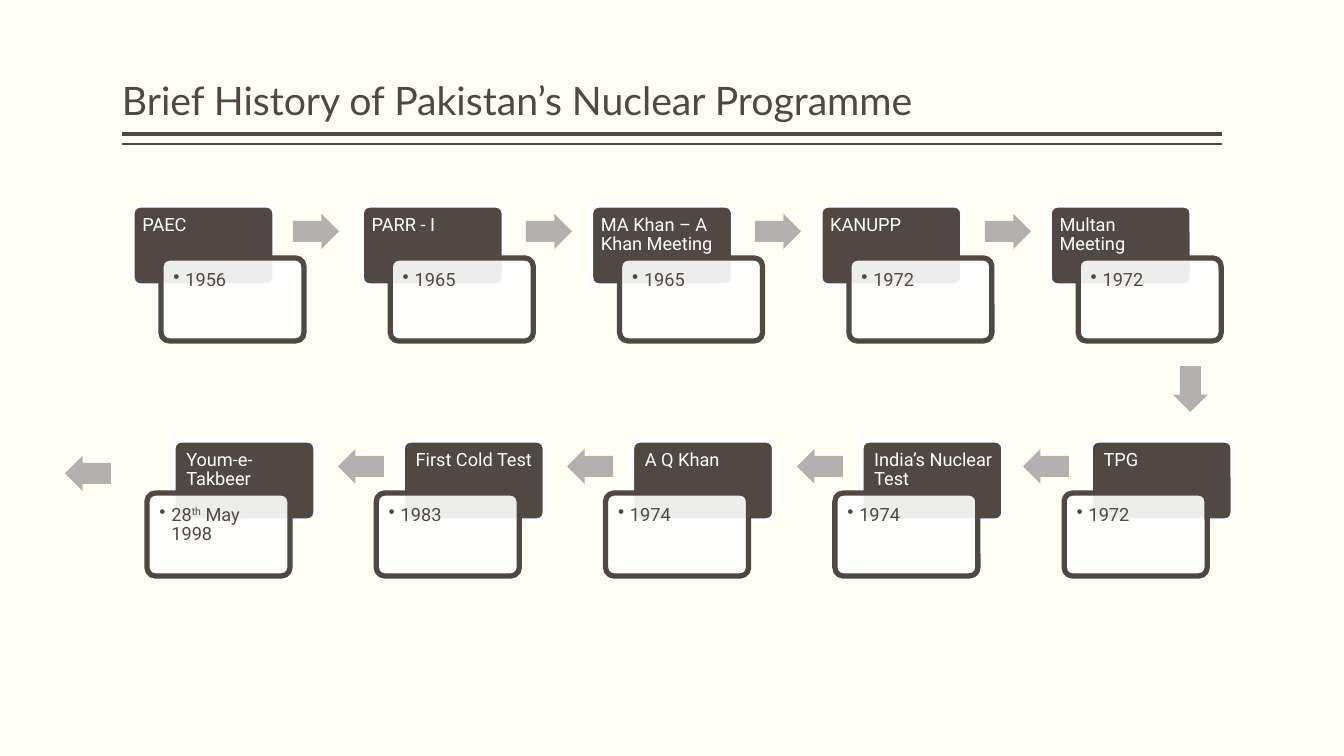
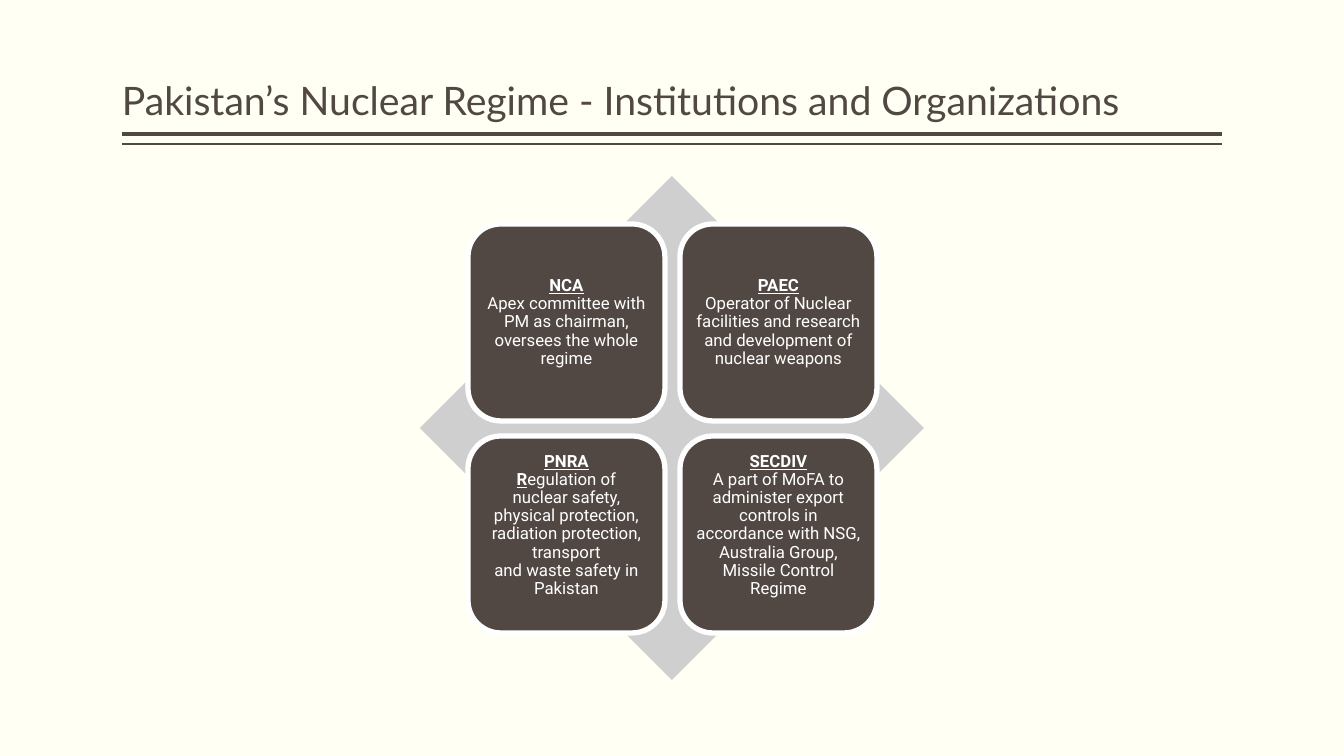
"""Build two slides on a nuclear programme: a two-row timeline and a four-part matrix."""
from dataclasses import dataclass

import lxml.etree
import pptx
import pptx.dml.color
import pptx.enum.shapes
import pptx.enum.text
import pptx.oxml.ns
import pptx.shapes.autoshape
import pptx.slide
import pptx.util

EMU_PER_PX = 914400 / 100.8
SLIDE_WIDTH, SLIDE_HEIGHT = 1344, 756
COLORS = {
    "paper": "FFFFF3",
    "ink": "514843",
    "white": "FFFFFF",
    "arrow": "B3B1B0",
    "diamond": "D0CFCF",
}
TITLE_FONT, BODY_FONT = "Lato", "Roboto"
OUTLINE_WIDTH = 3.78
TITLE_LEFT, TITLE_RIGHT = 122, 1222
CARD_WIDTH, CARD_HEIGHT, YEAR_HEIGHT = 143, 81, 83
CARD_PITCH = 229.3
YEAR_DROP = 53
BULLET_INDENT = 12
ARROW_LENGTH, ARROW_THICKNESS = 46, 35
TILE_SIZE, TILE_PITCH = 197, 212
TILE_LEFT, TILE_TOP = 468, 224

PRESET = pptx.enum.shapes.MSO_SHAPE
ALIGN = pptx.enum.text.PP_ALIGN
ANCHOR = pptx.enum.text.MSO_ANCHOR
Slide = pptx.slide.Slide
Shape = pptx.shapes.autoshape.Shape


@dataclass(frozen=True)
class Box:
    left: float
    top: float
    width: float
    height: float


@dataclass(frozen=True)
class Insets:
    left: int
    top: int
    right: int
    bottom: int


@dataclass(frozen=True)
class Run:
    text: str
    heading: bool = False
    raised: bool = False


@dataclass(frozen=True)
class TextStyle:
    font: str
    size: int
    color: str
    insets: Insets
    align: ALIGN = ALIGN.LEFT
    anchor: ANCHOR = ANCHOR.TOP
    bullet: bool = False


@dataclass(frozen=True)
class Event:
    name: str
    date: tuple[Run, ...]


@dataclass(frozen=True)
class TimelineRow:
    left: int
    top: int
    year_shift: int
    name_insets: Insets
    events: tuple[Event, ...]


@dataclass(frozen=True)
class Arrow:
    preset: PRESET
    left: int
    top: int


@dataclass(frozen=True)
class Tile:
    runs: tuple[Run, ...]
    bottom_inset: int = 5


def dated(name: str, year: str) -> Event:
    return Event(name, (Run(year),))


TIMELINE_ROWS = (
    TimelineRow(132, 205, 29, Insets(8, 8, 8, 3), (
        dated("PAEC", "1956"),
        dated("PARR - I", "1965"),
        dated("MA Khan – A Khan Meeting", "1965"),
        dated("KANUPP", "1972"),
        dated("Multan Meeting", "1972"),
    )),
    TimelineRow(173, 440, -26, Insets(11, 8, 4, 3), (
        Event("Youm-e-Takbeer", (Run("28"), Run("th", raised=True), Run(" May 1998"))),
        dated("First Cold Test", "1983"),
        dated("A Q Khan", "1974"),
        dated("India’s Nuclear Test", "1974"),
        dated("TPG", "1972"),
    )),
)
ARROWS = (
    *(Arrow(PRESET.RIGHT_ARROW, left, 214) for left in (293, 526, 755, 985)),
    Arrow(PRESET.DOWN_ARROW, 1173, 366),
    *(Arrow(PRESET.LEFT_ARROW, left, 449) for left in (1023, 797, 567, 338)),
    Arrow(PRESET.LEFT_ARROW, 65, 456),
)
TILES = (
    Tile((Run("NCA\n", heading=True),
          Run("Apex committee with PM as chairman, oversees the whole regime"))),
    Tile((Run("PAEC\n", heading=True),
          Run("Operator of Nuclear facilities and research and development of nuclear weapons"))),
    Tile((Run("PNRA\nR", heading=True),
          Run("egulation of\nnuclear safety, physical protection, radiation protection, "
              "transport\nand waste safety in Pakistan")), 23),
    Tile((Run("SECDIV\n", heading=True),
          Run("A part of MoFA to administer export controls in accordance with NSG, "
              "Australia Group, Missile Control Regime")), 23),
)


def px(length: float) -> int:
    return round(length * EMU_PER_PX)


def rgb(name: str) -> pptx.dml.color.RGBColor:
    return pptx.dml.color.RGBColor.from_string(COLORS[name])


def add_child(parent: lxml.etree._Element, tag: str, **attributes: str) -> None:
    lxml.etree.SubElement(parent, pptx.oxml.ns.qn(tag), attributes)


def write_text(shape: Shape, runs: tuple[Run, ...], style: TextStyle) -> None:
    frame = shape.text_frame
    frame.word_wrap = True
    frame.vertical_anchor = style.anchor
    frame.margin_left = px(style.insets.left)
    frame.margin_top = px(style.insets.top)
    frame.margin_right = px(style.insets.right)
    frame.margin_bottom = px(style.insets.bottom)
    paragraph = frame.paragraphs[0]
    if style.bullet:
        properties = paragraph._p.get_or_add_pPr()
        properties.set("marL", str(px(BULLET_INDENT)))
        properties.set("indent", str(-px(BULLET_INDENT)))
        add_child(properties, "a:buChar", char="•")
    paragraph.alignment = style.align
    paragraph.line_spacing = 0.9
    paragraph.font.name = style.font
    paragraph.font.size = pptx.util.Pt(style.size)
    paragraph.font.color.rgb = rgb(style.color)
    for item in runs:
        for index, line in enumerate(item.text.split("\n")):
            if index:
                paragraph.add_line_break()
            if not line:
                continue
            run = paragraph.add_run()
            run.text = line
            if item.heading:
                run.font.bold = True
                run.font.underline = True
            if item.raised:
                run._r.get_or_add_rPr().set("baseline", "30000")


def add_preset(slide: Slide, preset: PRESET, box: Box, fill: str,
               outline: str | None = None, adjustments: tuple[float, ...] = ()) -> Shape:
    shape = slide.shapes.add_shape(
        preset, px(box.left), px(box.top), px(box.width), px(box.height))
    shape.shadow.inherit = False
    shape.fill.solid()
    shape.fill.fore_color.rgb = rgb(fill)
    if outline:
        shape.line.color.rgb = rgb(outline)
        shape.line.width = pptx.util.Pt(OUTLINE_WIDTH)
    else:
        shape.line.fill.background()
    for index, value in enumerate(adjustments):
        shape.adjustments[index] = value
    return shape


def add_rule(slide: Slide, top: int, weight: int) -> None:
    rule = slide.shapes.add_connector(
        pptx.enum.shapes.MSO_CONNECTOR.STRAIGHT,
        px(TITLE_LEFT), px(top), px(TITLE_RIGHT), px(top))
    rule.line.color.rgb = rgb("ink")
    rule.line.width = pptx.util.Pt(weight)
    add_child(rule._element.spPr, "a:effectLst")


def add_titled_slide(presentation: pptx.presentation.Presentation, title: str) -> Slide:
    slide = presentation.slides.add_slide(presentation.slide_layouts[6])
    add_rule(slide, 134, 3)
    add_rule(slide, 144, 1)
    title_box = slide.shapes.add_textbox(
        px(TITLE_LEFT), px(8), px(TITLE_RIGHT - TITLE_LEFT), px(121))
    write_text(title_box, (Run(title),), TextStyle(
        TITLE_FONT, 28, "ink", Insets(0, 5, 0, 5), anchor=ANCHOR.BOTTOM))
    return slide


def add_event(slide: Slide, row: TimelineRow, column: int, event: Event) -> None:
    left = row.left + column * CARD_PITCH
    card = add_preset(slide, PRESET.ROUNDED_RECTANGLE,
                      Box(left, row.top, CARD_WIDTH, CARD_HEIGHT), "ink", "white", (0.1,))
    write_text(card, (Run(event.name),), TextStyle(BODY_FONT, 13, "white", row.name_insets))
    year = add_preset(
        slide, PRESET.ROUNDED_RECTANGLE,
        Box(left + row.year_shift, row.top + YEAR_DROP, CARD_WIDTH, YEAR_HEIGHT),
        "white", "ink", (0.1,))
    fill_color = year._element.spPr.find(pptx.oxml.ns.qn("a:solidFill"))[0]
    add_child(fill_color, "a:alpha", val="90000")
    write_text(year, event.date, TextStyle(
        BODY_FONT, 13, "ink", Insets(10, 10, 10, 10), bullet=True))


def add_arrow(slide: Slide, arrow: Arrow) -> None:
    width, height = ARROW_LENGTH, ARROW_THICKNESS
    if arrow.preset == PRESET.DOWN_ARROW:
        width, height = height, width
    add_preset(slide, arrow.preset, Box(arrow.left, arrow.top, width, height),
               "arrow", adjustments=(0.6, 0.5))


def build_history(presentation: pptx.presentation.Presentation) -> None:
    slide = add_titled_slide(presentation, "Brief History of Pakistan’s Nuclear Programme")
    for row in TIMELINE_ROWS:
        for column, event in enumerate(row.events):
            add_event(slide, row, column, event)
    for arrow in ARROWS:
        add_arrow(slide, arrow)


def build_regime(presentation: pptx.presentation.Presentation) -> None:
    slide = add_titled_slide(
        presentation, "Pakistan’s Nuclear Regime - Institutions and Organizations")
    add_preset(slide, PRESET.DIAMOND, Box(420, 176, 504, 504), "diamond")
    for index, tile in enumerate(TILES):
        row, column = divmod(index, 2)
        box = Box(TILE_LEFT + column * TILE_PITCH, TILE_TOP + row * TILE_PITCH,
                  TILE_SIZE, TILE_SIZE)
        shape = add_preset(slide, PRESET.ROUNDED_RECTANGLE, box, "ink", "white")
        write_text(shape, tile.runs, TextStyle(
            BODY_FONT, 12, "white", Insets(5, 5, 5, tile.bottom_inset),
            ALIGN.CENTER, ANCHOR.MIDDLE))


def main() -> None:
    presentation = pptx.Presentation()
    presentation.slide_width = px(SLIDE_WIDTH)
    presentation.slide_height = px(SLIDE_HEIGHT)
    background = presentation.slide_master.background.fill
    background.solid()
    background.fore_color.rgb = rgb("paper")
    build_history(presentation)
    build_regime(presentation)
    presentation.save("out.pptx")


if __name__ == "__main__":
    main()
